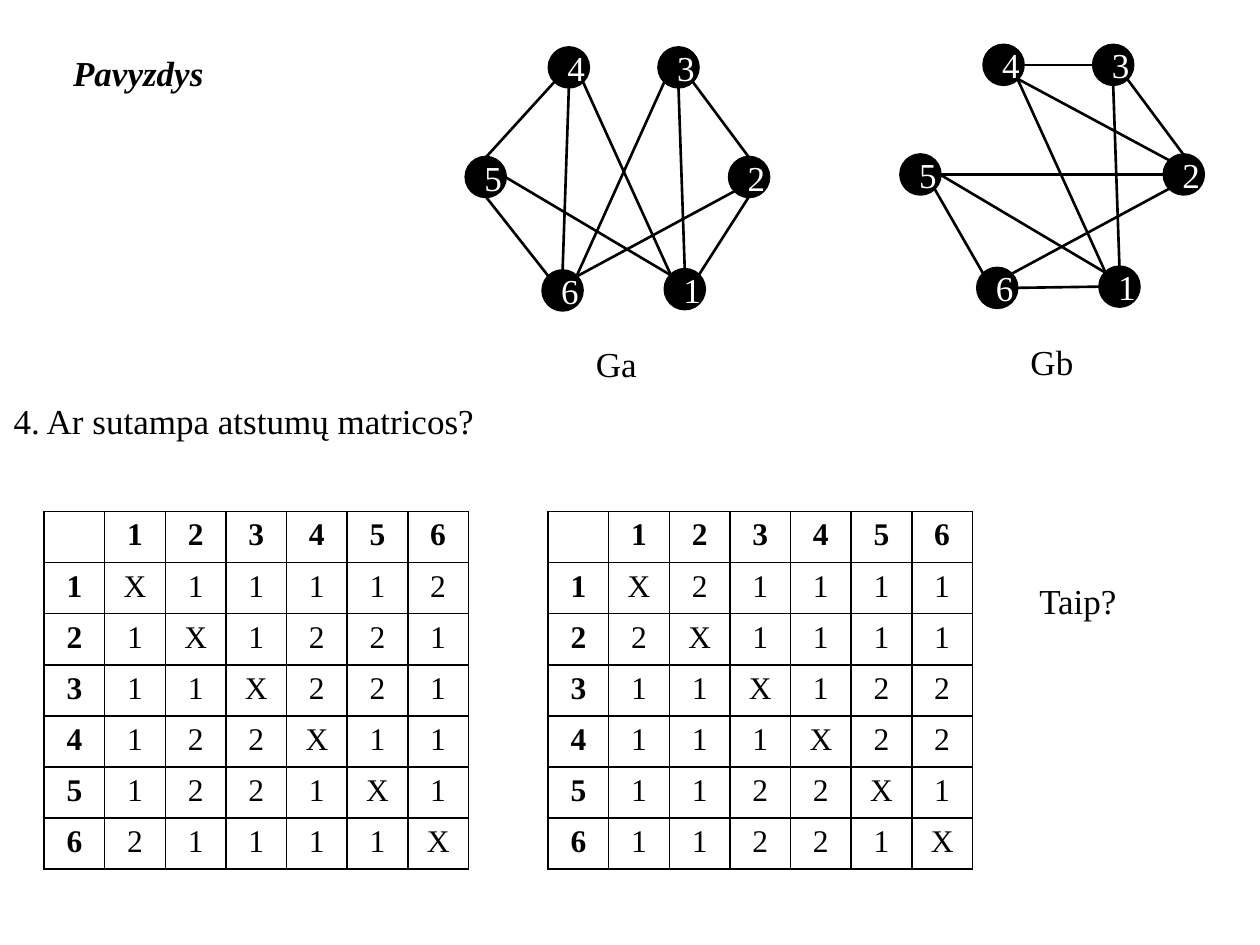
from math import sqrt

from pptx import Presentation
from pptx.dml.color import RGBColor
from pptx.enum.shapes import MSO_CONNECTOR, MSO_SHAPE
from pptx.enum.text import MSO_ANCHOR, MSO_AUTO_SIZE, PP_ALIGN
from pptx.oxml import parse_xml
from pptx.oxml.ns import nsdecls
from pptx.oxml.xmlchemy import OxmlElement
from pptx.util import Inches, Pt

COLORS = {"ink": "000000", "paper": "FFFFFF"}
FONT = "Times New Roman"
NODE = 0.31
DIAGONAL = 1 / sqrt(2)
SITES = {"T": (0, -1), "B": (0, 1), "L": (-1, 0), "R": (1, 0),
         "TL": (-DIAGONAL, -DIAGONAL), "TR": (DIAGONAL, -DIAGONAL),
         "BL": (-DIAGONAL, DIAGONAL), "BR": (DIAGONAL, DIAGONAL)}
NODES = {"1": (1.58, 1.76), "2": (2.09, 0.87), "3": (1.53, 0),
         "4": (0.66, 0), "5": (0, 0.87), "6": (0.61, 1.77)}
GA_EDGES = ["3BR-2T", "2B-1TR", "6TL-5B", "1TL-4BR", "5R-1TL",
            "2BL-6TR", "1T-3B", "6TR-3BL", "5T-4BL", "6T-4B"]
GB_EDGES = ["3BR-2T", "3B-1T", "6R-1L", "1TL-4BR", "5R-1TL",
            "5R-2L", "6TR-2BL", "4BR-2TL", "4R-3L", "5BR-6TL"]
GA_DISTANCES = ["X11112", "1X1221", "11X221", "122X11", "1221X1", "21111X"]
GB_DISTANCES = ["X21111", "2X1111", "11X122", "111X22", "1122X1", "11221X"]


def rgb(name):
    """Return the named colour."""
    return RGBColor.from_string(COLORS[name])


def write(tf, text, size=20, color="ink", bold=False, italic=False, align=PP_ALIGN.LEFT):
    """Put one formatted line of text in a text frame."""
    p = tf.paragraphs[0]
    p.alignment = align
    r = p.add_run()
    r.text = text
    r.font.name = FONT
    r.font.size = Pt(size)
    r.font.bold = bold
    r.font.italic = italic
    r.font.color.rgb = rgb(color)


def add_label(s, x, y, w, text, **fmt):
    """Add a one-line text box."""
    tf = s.shapes.add_textbox(Inches(x), Inches(y), Inches(w), Inches(0.44)).text_frame
    tf.word_wrap = True
    tf.auto_size = MSO_AUTO_SIZE.SHAPE_TO_FIT_TEXT
    write(tf, text, **fmt)


def add_heading(s, x, y, w, text):
    """Place and format the title placeholder."""
    sp = s.shapes.title
    sp.left, sp.top, sp.width, sp.height = Inches(x), Inches(y), Inches(w), Inches(0.44)
    tf = sp.text_frame
    tf.vertical_anchor = MSO_ANCHOR.TOP
    tf.auto_size = MSO_AUTO_SIZE.NONE
    write(tf, text, bold=True, italic=True)


def add_node(s, x, y, number):
    """Add a numbered graph node."""
    sp = s.shapes.add_shape(MSO_SHAPE.OVAL, Inches(x), Inches(y), Inches(NODE), Inches(NODE))
    sp.shadow.inherit = False
    sp.fill.solid()
    sp.fill.fore_color.rgb = rgb("ink")
    sp.line.color.rgb = rgb("ink")
    sp.line.width = Pt(2)
    sp.text_frame.vertical_anchor = MSO_ANCHOR.MIDDLE
    write(sp.text_frame, number, color="paper", align=PP_ALIGN.CENTER)


def site_point(x, y, end):
    """Return the point on a node's rim for an end such as 3BR."""
    node_x, node_y = NODES[end[0]]
    dx, dy = SITES[end[1:]]
    radius = NODE / 2
    return Inches(x + node_x + radius * (1 + dx)), Inches(y + node_y + radius * (1 + dy))


def add_edge(s, x, y, edge):
    """Join two nodes with a line."""
    start, end = edge.split("-")
    line = s.shapes.add_connector(MSO_CONNECTOR.STRAIGHT,
                                  *site_point(x, y, start), *site_point(x, y, end))
    line.line.color.rgb = rgb("ink")
    line.line.width = Pt(1.5)
    line._element.spPr.append(OxmlElement("a:effectLst"))


def add_graph(s, x, y, name, edges):
    """Draw a six-node graph with its name below."""
    for number, (dx, dy) in NODES.items():
        add_node(s, x + dx, y + dy, number)
    for edge in edges:
        add_edge(s, x, y, edge)
    add_label(s, x + 0.93, y + 2.29, 0.75, name)


def add_borders(cell):
    """Give a cell thin lines on all four sides."""
    tc_pr = cell._tc.get_or_add_tcPr()
    for side in "LRTB":
        tc_pr.append(parse_xml(
            f'<a:ln{side} {nsdecls("a")} w="12700"><a:solidFill>'
            f'<a:srgbClr val="{COLORS["ink"]}"/></a:solidFill></a:ln{side}>'))


def add_matrix(s, x, y, w, h, distances):
    """Add a distance matrix with numbered rows and columns."""
    rows = [" 123456"] + [f"{i}{row}" for i, row in enumerate(distances, 1)]
    n = len(rows)
    table = s.shapes.add_table(n, n, Inches(x), Inches(y), Inches(w), Inches(h)).table
    table.first_row = table.horz_banding = False
    for i, row in enumerate(rows):
        for j, value in enumerate(row):
            cell = table.cell(i, j)
            add_borders(cell)
            cell.fill.background()
            if value.strip():
                write(cell.text_frame, value, size=18, bold=i == 0 or j == 0,
                      align=PP_ALIGN.CENTER)


def main():
    """Build the slide and save it."""
    prs = Presentation()
    prs.slide_width, prs.slide_height = Inches(10), Inches(7.5)
    s = prs.slides.add_slide(prs.slide_layouts[5])
    add_heading(s, 0.48, 0.36, 4.8, "Pavyzdys")
    add_label(s, 0.01, 3.12, 4.96, "4. Ar sutampa atstumų matricos?")
    add_matrix(s, 0.35, 4.06, 3.37, 2.84, GA_DISTANCES)
    add_matrix(s, 4.35, 4.06, 3.37, 2.84, GB_DISTANCES)
    add_graph(s, 3.7, 0.38, "Ga", GA_EDGES)
    add_graph(s, 7.15, 0.36, "Gb", GB_EDGES)
    add_label(s, 8.15, 4.55, 1.26, "Taip?")
    prs.save("out.pptx")


if __name__ == "__main__":
    main()
